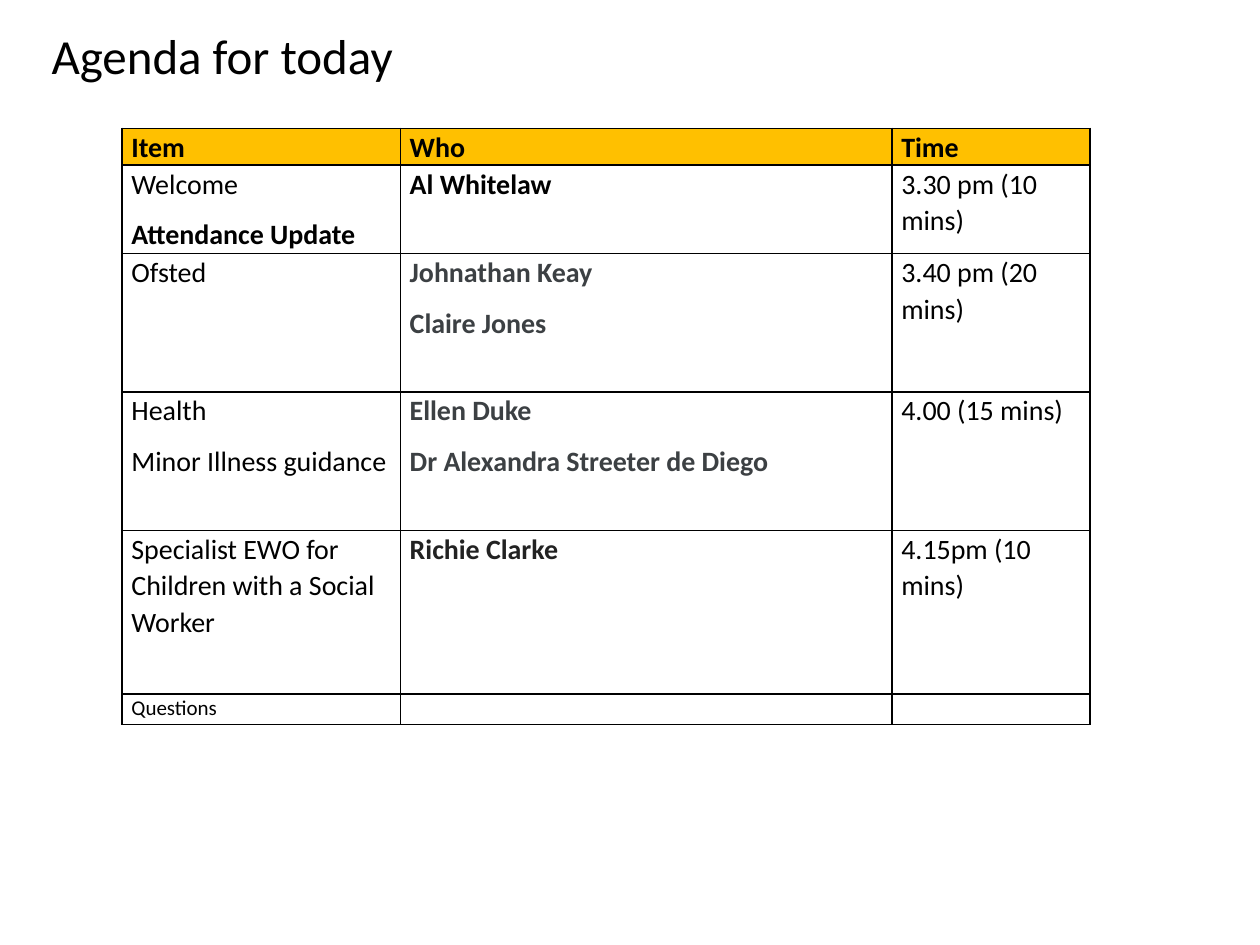
"""Build the agenda slide: a title above a bordered timetable."""
from dataclasses import dataclass

from lxml.etree import SubElement
from pptx import Presentation
from pptx.dml.color import RGBColor
from pptx.enum.text import MSO_ANCHOR
from pptx.oxml.ns import qn
from pptx.util import Cm, Pt

FONT = "Calibri"
BLACK, GREY, CHARCOAL, AMBER = "000000", "3C4043", "222222", "FFC000"
COLUMN_WIDTHS = (5.61, 9.91, 3.99)


@dataclass(frozen=True)
class Line:
    text: str
    bold: bool = False
    color: str = BLACK


@dataclass(frozen=True)
class AgendaRow:
    height: float
    item: tuple[Line, ...]
    who: tuple[Line, ...]
    time: tuple[Line, ...]
    size: int = 16
    fill: str | None = None


AGENDA = (
    AgendaRow(0.74, (Line("Item", True),), (Line("Who", True),),
              (Line("Time", True),), fill=AMBER),
    AgendaRow(1.78, (Line("Welcome"), Line("Attendance Update", True)),
              (Line("Al Whitelaw", True),), (Line("3.30 pm (10 mins)"),)),
    AgendaRow(2.79, (Line("Ofsted"),),
              (Line("Johnathan Keay", True, GREY), Line("Claire Jones", True, GREY)),
              (Line("3.40 pm (20 mins)"),)),
    AgendaRow(2.79, (Line("Health"), Line("Minor Illness guidance")),
              (Line("Ellen Duke", True, GREY),
               Line("Dr Alexandra Streeter de Diego", True, GREY)),
              (Line("4.00 (15 mins)"),)),
    AgendaRow(3.3, (Line("Specialist EWO for Children with a Social Worker"),),
              (Line("Richie Clarke", True, CHARCOAL),), (Line("4.15pm (10 mins)"),)),
    AgendaRow(0.61, (Line("Questions"),), (), (), size=12),
)


def rgb(value: str) -> RGBColor:
    """Return the colour for a hex string."""
    return RGBColor.from_string(value)


def write_line(p, line: Line, size: int) -> None:
    """Write one line of text into a paragraph."""
    p.add_run().text = line.text
    p.font.name, p.font.size, p.font.bold = FONT, Pt(size), line.bold
    p.font.color.rgb = rgb(line.color)


def add_borders(cell) -> None:
    """Give a cell a thin black line on every side."""
    tc_pr = cell._tc.get_or_add_tcPr()
    for side in ("lnL", "lnR", "lnT", "lnB"):
        ln = SubElement(tc_pr, qn(f"a:{side}"), w=str(Pt(1)))
        SubElement(SubElement(ln, qn("a:solidFill")), qn("a:srgbClr"), val=BLACK)


def fill_cell(cell, lines: tuple[Line, ...], row: AgendaRow) -> None:
    """Format a cell and write its lines."""
    cell.margin_left = cell.margin_right = Cm(0.19)
    cell.margin_top = cell.margin_bottom = 0
    add_borders(cell)
    if row.fill:
        cell.fill.solid()
        cell.fill.fore_color.rgb = rgb(row.fill)
    else:
        cell.fill.background()
    tf = cell.text_frame
    for i, line in enumerate(lines):
        p = tf.add_paragraph() if i else tf.paragraphs[0]
        p.line_spacing, p.space_after = 1.07, Pt(8)
        write_line(p, line, row.size)
    if not lines:
        SubElement(tf.paragraphs[0]._p, qn("a:endParaRPr"), sz=str(row.size * 100))


def add_title(s, text: str) -> None:
    """Add the slide title."""
    tf = s.shapes.add_textbox(Cm(0.79), Cm(-0.38), Cm(17.55), Cm(2.97)).text_frame
    tf.word_wrap = True
    tf.vertical_anchor = MSO_ANCHOR.MIDDLE
    write_line(tf.paragraphs[0], Line(text), 28)


def add_agenda(s, rows: tuple[AgendaRow, ...]) -> None:
    """Add the timetable."""
    table = s.shapes.add_table(
        len(rows), len(COLUMN_WIDTHS), Cm(2.46), Cm(2.59),
        Cm(sum(COLUMN_WIDTHS)), Cm(sum(row.height for row in rows))).table
    table.first_row = table.horz_banding = False
    for column, width in zip(table.columns, COLUMN_WIDTHS):
        column.width = Cm(width)
    for r, row in enumerate(rows):
        table.rows[r].height = Cm(row.height)
        for c, lines in enumerate((row.item, row.who, row.time)):
            fill_cell(table.cell(r, c), lines, row)


def main() -> None:
    """Build and save the presentation."""
    prs = Presentation()
    prs.slide_width, prs.slide_height = Cm(25.4), Cm(19.05)
    s = prs.slides.add_slide(prs.slide_layouts[6])
    add_title(s, "Agenda for today")
    add_agenda(s, AGENDA)
    prs.save("out.pptx")


if __name__ == "__main__":
    main()
